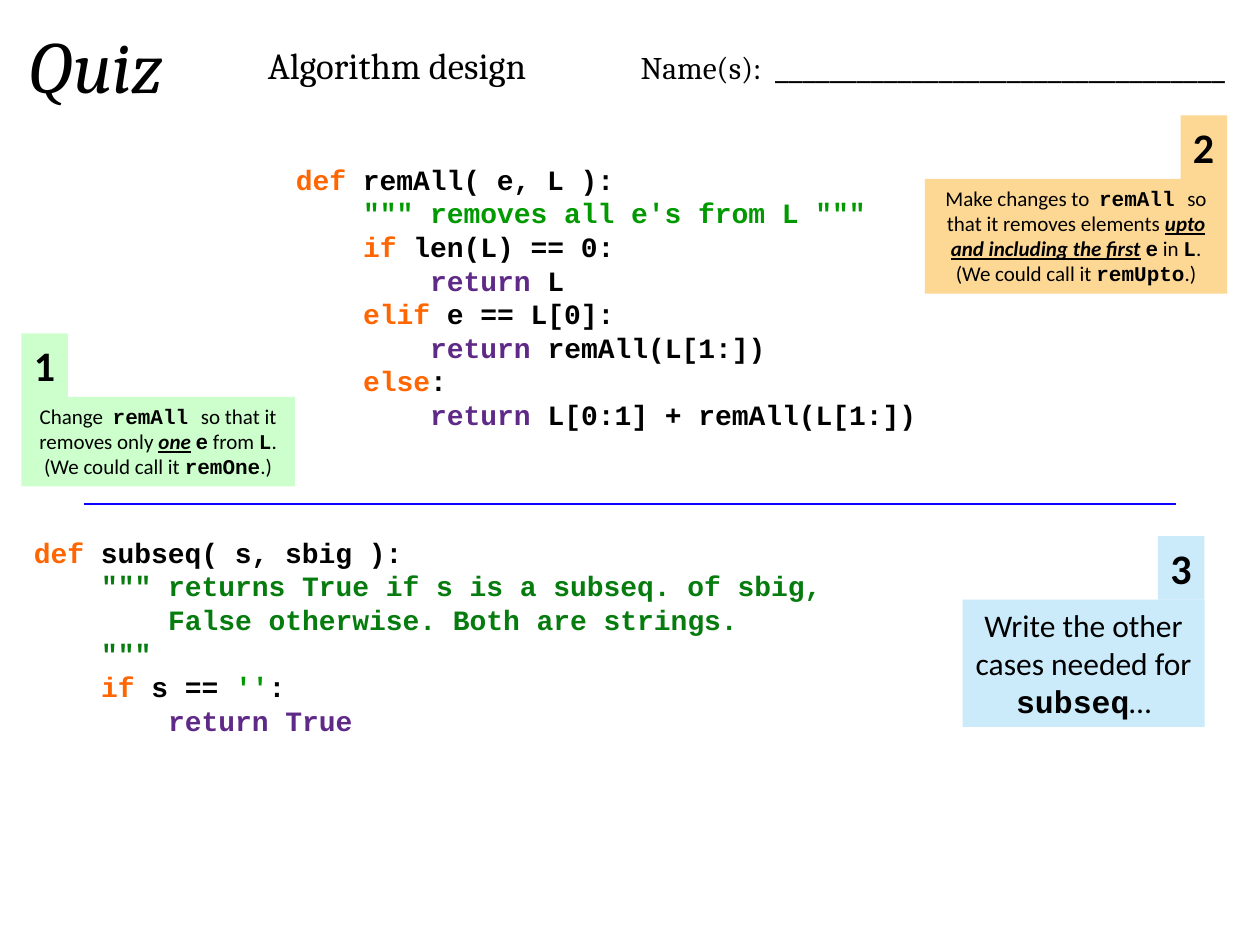
from typing import NamedTuple

from lxml import etree
from pptx import Presentation
from pptx.dml.color import RGBColor
from pptx.enum.shapes import MSO_CONNECTOR, MSO_SHAPE
from pptx.enum.text import MSO_ANCHOR, MSO_AUTO_SIZE, PP_ALIGN
from pptx.oxml.ns import qn
from pptx.util import Inches, Pt

RECT = MSO_SHAPE.RECTANGLE
LINE = MSO_CONNECTOR.STRAIGHT
TOP = MSO_ANCHOR.TOP
GROW = MSO_AUTO_SIZE.SHAPE_TO_FIT_TEXT
LEFT, MID, RIGHT = PP_ALIGN.LEFT, PP_ALIGN.CENTER, PP_ALIGN.RIGHT

BLACK = RGBColor(0, 0, 0)
ORANGE = RGBColor(0xFF, 0x65, 0x00)
PURPLE = RGBColor(0x5F, 0x29, 0x87)
GREEN = RGBColor(0x00, 0x99, 0x00)
PINE = RGBColor(0x06, 0x7B, 0x0E)
BLUE = RGBColor(0x0B, 0x04, 0xFF)
MINT = RGBColor(0xCC, 0xFF, 0xCC)
SAND = RGBColor(0xFD, 0xD8, 0x95)
SKY = RGBColor(0xCB, 0xEB, 0xFB)

WIDE, HIGH = Inches(10), Inches(7.5)
COLS, ROWS = 100, 75
BADGE_WIDE, BADGE_HIGH = 3.7, 5.05
CODE_SIZE = 16
TAB = Pt(4 * 0.6 * CODE_SIZE)


class Style(NamedTuple):
    font: str
    bold: bool = False
    slant: bool = False
    under: bool = False
    color: RGBColor = BLACK


class Box(NamedTuple):
    col: float
    row: float
    wide: float
    high: float


class Span(NamedTuple):
    text: str
    style: Style
    size: float


class Row(NamedTuple):
    depth: int
    words: list[tuple[str, RGBColor]]


class Title(NamedTuple):
    box: Box
    align: PP_ALIGN
    spans: list[Span]


class Code(NamedTuple):
    box: Box
    rows: list[Row]


class Note(NamedTuple):
    label: str
    box: Box
    fill: RGBColor
    size: int
    right: bool
    words: list[tuple[str, Style]]


SERIF = Style("Cambria")
SLANT = Style("Cambria", slant=True)
PLAIN = Style("Calibri")
BOLD = Style("Calibri", bold=True)
STRESS = Style("Calibri", bold=True, slant=True, under=True)
MONO = Style("Courier New", bold=True)

TITLES = [
    Title(Box(1.2, 1.1, 14.6, 8.1), LEFT, [Span("Quiz", SLANT, 42)]),
    Title(Box(14.4, 2.9, 34.2, 4.5), MID, [Span("Algorithm design", SERIF, 21)]),
    Title(Box(46.7, 2.9, 51.5, 4.5), RIGHT,
          [Span("Name(s):  ", SERIF, 18), Span("_" * 33, SERIF, 21)]),
]

CODES = [
    Code(Box(22.5, 12.4, 53.3, 22.6), [
        Row(0, [("def ", ORANGE), ("remAll( e, L ):", BLACK)]),
        Row(1, [('""" removes all e\'s from L """', GREEN)]),
        Row(1, [("if ", ORANGE), ("len(L) == 0:", BLACK)]),
        Row(2, [("return", PURPLE), (" L", BLACK)]),
        Row(1, [("elif ", ORANGE), ("e == L[0]:", BLACK)]),
        Row(2, [("return ", PURPLE), ("remAll(L[1:])", BLACK)]),
        Row(1, [("else", ORANGE), (":", BLACK)]),
        Row(2, [("return ", PURPLE), ("L[0:1] + remAll(L[1:])", BLACK)]),
    ]),
    Code(Box(1.7, 42, 70.8, 17.2), [
        Row(0, [("def ", ORANGE), ("subseq( s, sbig ):", BLACK)]),
        Row(1, [('""" returns True if s is a subseq. of sbig,', PINE)]),
        Row(2, [("False otherwise. Both are strings.", PINE)]),
        Row(1, [('"""', PINE)]),
        Row(1, [("if", ORANGE), (" s == ", BLACK), ("''", GREEN), (":", BLACK)]),
        Row(2, [("return True", PURPLE)]),
    ]),
]


def ask(lead: str, verb: str, stress: str, link: str, name: str) -> list[tuple[str, Style]]:
    return [
        (lead + "  ", PLAIN), ("remAll ", MONO),
        (f"so that it removes {verb} ", PLAIN), (stress, STRESS),
        (" ", PLAIN), ("e", MONO), (f" {link} ", PLAIN), ("L", MONO),
        (". (We could call it ", PLAIN), (name, MONO), (".)", PLAIN),
    ]


NOTES = [
    Note("1", Box(1.7, 31.5, 21.7, 7.1), MINT, 12, False,
         ask("Change", "only", "one", "from", "remOne")),
    Note("2", Box(73.4, 14.2, 24, 9.1), SAND, 12, True,
         ask("Make changes to", "elements", "upto and including the first",
             "in", "remUpto")),
    Note("3", Box(76.4, 47.6, 19.2, 10.1), SKY, 18, True,
         [("Write the other cases needed for ", PLAIN),
          ("subseq", MONO), ("…", PLAIN)]),
]


def across(cols: float) -> int:
    return round(WIDE * cols / COLS)


def down(rows: float) -> int:
    return round(HIGH * rows / ROWS)


def place(box: Box) -> tuple[int, int, int, int]:
    return across(box.col), down(box.row), across(box.wide), down(box.high)


def write(para, spans: list[Span], align: PP_ALIGN) -> None:
    para.alignment = align
    for span in spans:
        run = para.add_run()
        run.text = span.text
        font = run.font
        font.name = span.style.font
        font.size = Pt(span.size)
        font.bold = span.style.bold
        font.italic = span.style.slant
        font.underline = span.style.under
        font.color.rgb = span.style.color


def set_frame(frame, wrap: bool = True) -> None:
    frame.word_wrap = wrap
    frame.auto_size = GROW
    frame.vertical_anchor = TOP


def draw_title(slide, title: Title) -> None:
    frame = slide.shapes.add_textbox(*place(title.box)).text_frame
    set_frame(frame)
    write(frame.paragraphs[0], title.spans, title.align)


def draw_code(slide, code: Code) -> None:
    frame = slide.shapes.add_textbox(*place(code.box)).text_frame
    set_frame(frame)
    for i, row in enumerate(code.rows):
        para = frame.add_paragraph() if i else frame.paragraphs[0]
        spans = [Span(text, MONO._replace(color=color), CODE_SIZE)
                 for text, color in row.words]
        write(para, spans, LEFT)
        para._p.get_or_add_pPr().set("marL", str(row.depth * TAB))


def draw_panel(slide, box: Box, fill: RGBColor, spans: list[Span],
               align: PP_ALIGN, wrap: bool) -> None:
    shape = slide.shapes.add_shape(RECT, *place(box))
    shape.shadow.inherit = False
    shape.fill.solid()
    shape.fill.fore_color.rgb = fill
    shape.line.fill.background()
    set_frame(shape.text_frame, wrap)
    write(shape.text_frame.paragraphs[0], spans, align)


def draw_note(slide, note: Note) -> None:
    box = note.box
    col = box.col + (box.wide - BADGE_WIDE if note.right else 0)
    badge = Box(col, box.row - BADGE_HIGH, BADGE_WIDE, BADGE_HIGH)
    draw_panel(slide, badge, note.fill, [Span(note.label, BOLD, 24)], LEFT, False)
    spans = [Span(text, style, note.size) for text, style in note.words]
    draw_panel(slide, box, note.fill, spans, MID, True)


def draw_rule(slide) -> None:
    y = down(40)
    rule = slide.shapes.add_connector(LINE, across(6.7), y, across(93.3), y)
    rule.line.color.rgb = BLUE
    rule.line.width = Pt(0.75)
    etree.SubElement(rule._element.spPr, qn("a:effectLst"))


def main() -> None:
    deck = Presentation()
    deck.slide_width, deck.slide_height = WIDE, HIGH
    slide = deck.slides.add_slide(deck.slide_layouts[6])
    for title in TITLES:
        draw_title(slide, title)
    for code in CODES:
        draw_code(slide, code)
    draw_rule(slide)
    for note in NOTES:
        draw_note(slide, note)
    deck.save("out.pptx")


if __name__ == "__main__":
    main()
